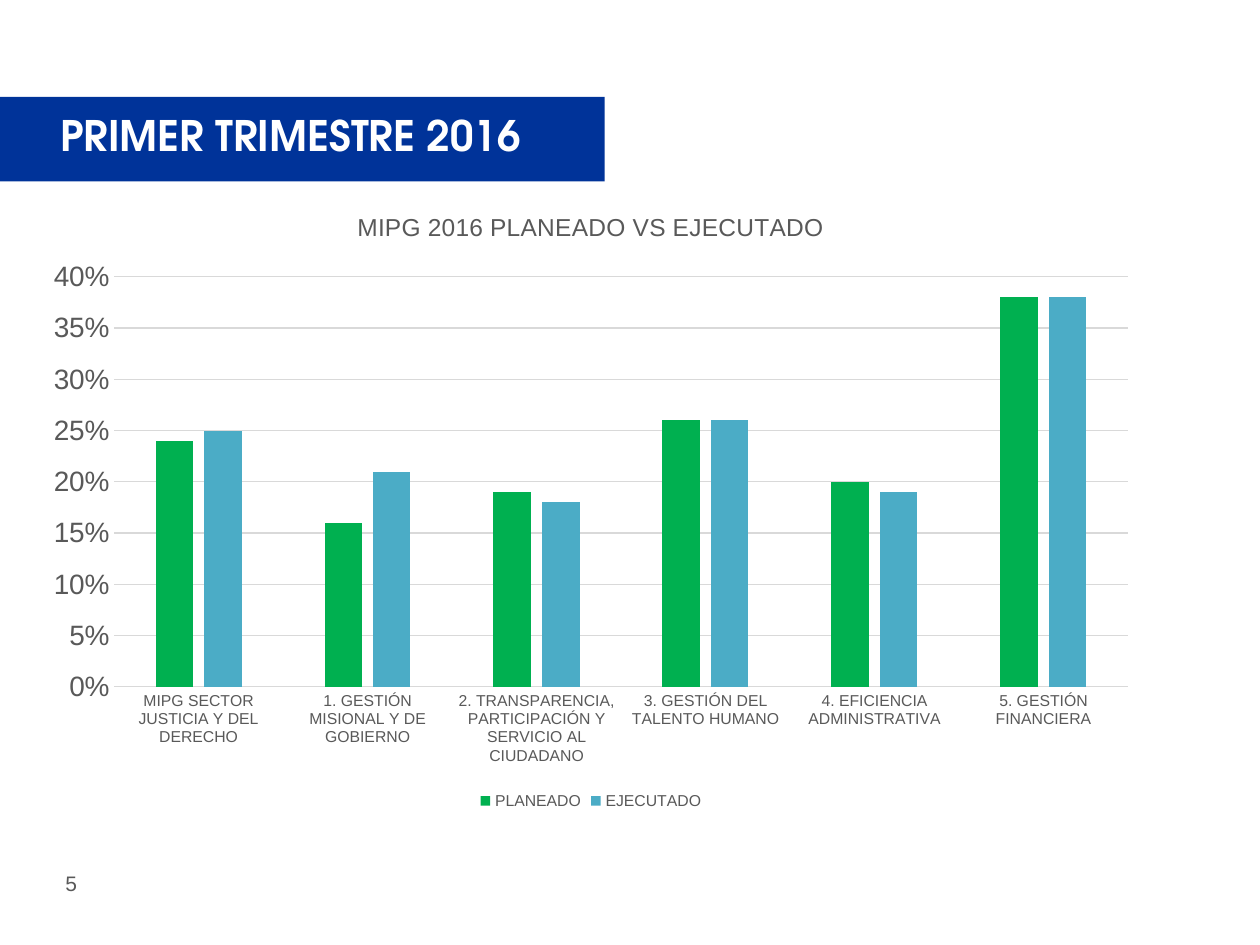
from pptx import Presentation
from pptx.chart.data import CategoryChartData
from pptx.dml.color import RGBColor
from pptx.enum.chart import XL_CHART_TYPE, XL_LEGEND_POSITION, XL_TICK_MARK
from pptx.enum.shapes import MSO_SHAPE
from pptx.enum.text import MSO_ANCHOR, PP_ALIGN
from pptx.util import Inches, Pt

GRAY, RULE = "595959", "D9D9D9"


def paint(target, color):
    """Give a fill a solid colour, or a font its text colour."""
    if hasattr(target, "solid"):
        target.solid()
        target.fore_color.rgb = RGBColor.from_string(color)
    else:
        target.color.rgb = RGBColor.from_string(color)


def style(font, size, color=GRAY, name="Arial", bold=False):
    form = {"size": Pt(size), "name": name, "bold": bold}
    for key, value in form.items():
        setattr(font, key, value)
    paint(font, color)


deck = Presentation()
deck.slide_width, deck.slide_height = Inches(10), Inches(7.5)
slide = deck.slides.add_slide(deck.slide_layouts[5])
shapes = slide.shapes

# Title on its band
band = shapes.add_shape(
    MSO_SHAPE.RECTANGLE, 0, Inches(0.77), Inches(4.8), Inches(0.67))
band.shadow.inherit = False
paint(band.fill, "003399")
band.line.fill.background()

title = shapes.title
title._element.addprevious(band._element)
place = {"left": 0.25, "top": 0.83, "width": 4.11, "height": 0.48}
for key, value in place.items():
    setattr(title, key, Inches(value))
title.text = "PRIMER TRIMESTRE 2016"
title.text_frame.vertical_anchor = MSO_ANCHOR.MIDDLE
head = title.text_frame.paragraphs[0]
head.alignment = PP_ALIGN.CENTER
style(head.runs[0].font, 24, "FFFFFF", "TeX Gyre Adventor", True)

# Page number
page = shapes.add_textbox(
    Inches(0.42), Inches(6.86), Inches(0.75), Inches(0.3))
page.text_frame.word_wrap = True
page.text_frame.text = "5"
style(page.text_frame.paragraphs[0].runs[0].font, 12)

# Planned against executed
data = CategoryChartData(number_format="0%")
data.categories = [
    "MIPG SECTOR JUSTICIA Y DEL DERECHO",
    "1. GESTIÓN MISIONAL Y DE GOBIERNO",
    "2. TRANSPARENCIA, PARTICIPACIÓN Y SERVICIO AL CIUDADANO",
    "3. GESTIÓN DEL TALENTO HUMANO",
    "4. EFICIENCIA ADMINISTRATIVA",
    "5. GESTIÓN FINANCIERA",
]
data.add_series("PLANEADO", [0.24, 0.16, 0.19, 0.26, 0.2, 0.38])
data.add_series("EJECUTADO", [0.25, 0.21, 0.18, 0.26, 0.19, 0.38])
chart = shapes.add_chart(
    XL_CHART_TYPE.COLUMN_CLUSTERED, Inches(0.25), Inches(1.49),
    Inches(8.88), Inches(4.98), data).chart
style(chart.font, 10, "000000")

chart.has_title = True
label = chart.chart_title.text_frame
label.text = "MIPG 2016 PLANEADO VS EJECUTADO"
style(label.paragraphs[0].runs[0].font, 14)
chart.chart_title.include_in_layout = False

chart.has_legend = True
chart.legend.position = XL_LEGEND_POSITION.BOTTOM
chart.legend.include_in_layout = False
style(chart.legend.font, 9)

plot = chart.plots[0]
form = {"gap_width": 219, "overlap": -27, "vary_by_categories": False}
for key, value in form.items():
    setattr(plot, key, value)
for series, color in zip(plot.series, ["00B050", "4BACC6"]):
    paint(series.format.fill, color)

cats, scale = chart.category_axis, chart.value_axis
for axis, size in [(cats, 9), (scale, 16)]:
    axis.major_tick_mark = axis.minor_tick_mark = XL_TICK_MARK.NONE
    style(axis.tick_labels.font, size)
form = {"minimum_scale": 0, "maximum_scale": 0.4, "major_unit": 0.05}
for key, value in form.items():
    setattr(scale, key, value)
scale.tick_labels.number_format = "0%"
scale.tick_labels.number_format_is_linked = False
scale.format.line.fill.background()
for line in [cats.format.line, scale.major_gridlines.format.line]:
    paint(line.fill, RULE)
    line.width = Pt(0.75)

deck.save("out.pptx")
